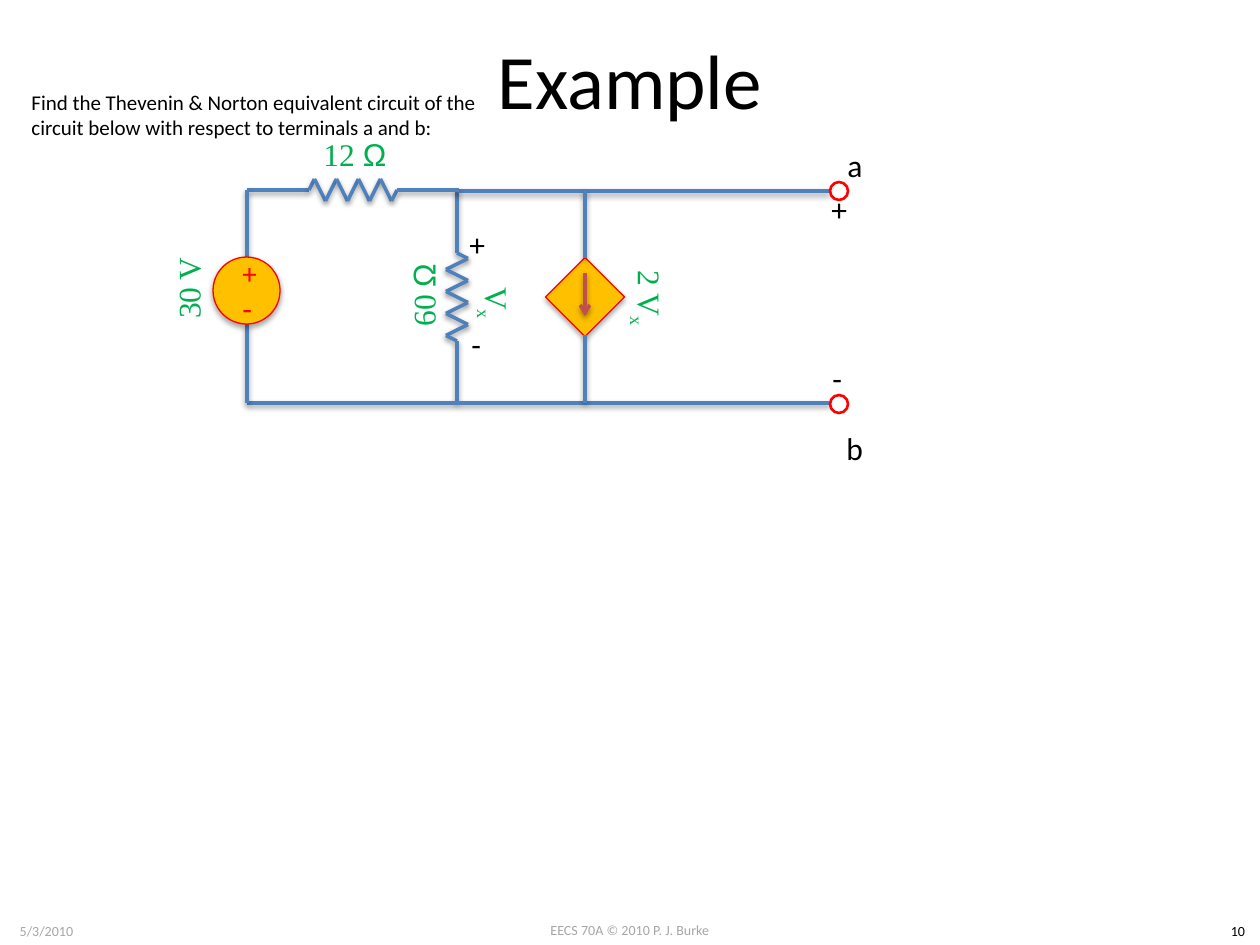
from dataclasses import dataclass
from itertools import pairwise
from pptx import Presentation
from pptx.dml.color import RGBColor
from pptx.enum.shapes import MSO_CONNECTOR as Wire, MSO_SHAPE as Kind
from pptx.enum.text import MSO_ANCHOR as Anchor, MSO_AUTO_SIZE as Auto, PP_ALIGN as Align
from pptx.oxml import parse_xml
from pptx.oxml.ns import nsdecls
from pptx.util import Emu, Pt

SCALE = 914400 / 126


@dataclass(frozen=True)
class Theme:
    ink: str = "000000"
    pale: str = "A6A6A6"
    wire: str = "4F81BD"
    gold: str = "FFC000"
    red: str = "FF0000"
    green: str = "00B050"
    arrow: str = "C0504D"
    body: str = "Calibri"
    serif: str = "Times New Roman"
    sans: str = "Arial"
    title: int = 44
    label: int = 18
    plus: float = 16.6
    task: int = 12
    foot: int = 8


T = Theme()


def px(n):
    return Emu(round(n * SCALE))


def rgb(code):
    return RGBColor.from_string(code)


def text(slide, box, words, size=T.label, font=T.body, color=T.ink, align=Align.LEFT,
         mid=False, wrap=True, turn=0, sub="", ohm=False):
    shape = slide.shapes.add_textbox(*map(px, box))
    shape.rotation = turn
    frame = shape.text_frame
    frame.word_wrap = wrap
    frame.vertical_anchor = Anchor.MIDDLE if mid else Anchor.TOP
    frame.auto_size = Auto.NONE if mid else Auto.SHAPE_TO_FIT_TEXT
    para = frame.paragraphs[0]
    para.alignment = align
    parts = [(words, font)] + [("Ω", T.sans)] * ohm + [(sub, font)] * bool(sub)
    for part, face in parts:
        run = para.add_run()
        run.text = part
        run.font.size, run.font.name = Pt(size), face
        run.font.color.rgb = rgb(color)
    if sub:
        run._r.get_or_add_rPr().set("baseline", "-25000")


def value(slide, x, y, words, **fmt):
    text(slide, (x, y, 150, 92), words, font=T.serif, color=T.green,
         align=Align.CENTER, mid=True, **fmt)


def sign(slide, x, y, words):
    text(slide, (x, y, 42, 50), words, wrap=False)


def shade(shape, dist=20000, alpha=38000):
    shape._element.spPr.append(parse_xml(
        f'<a:effectLst {nsdecls("a")}><a:outerShdw blurRad="40000" dist="{dist}" '
        f'dir="5400000" rotWithShape="0"><a:srgbClr val="000000">'
        f'<a:alpha val="{alpha}"/></a:srgbClr></a:outerShdw></a:effectLst>'))


def wire(slide, start, end, color=T.wire, head=False):
    line = slide.shapes.add_connector(Wire.STRAIGHT, *map(px, (*start, *end)))
    line.line.color.rgb = rgb(color)
    line.line.width = Pt(2)
    if head:
        line.line._get_or_add_ln().append(
            parse_xml(f'<a:tailEnd {nsdecls("a")} type="arrow"/>'))
    shade(line)


def body(slide, kind, box, turn=0):
    shape = slide.shapes.add_shape(kind, *map(px, box))
    shape.rotation = turn
    shape.fill.solid()
    shape.fill.fore_color.rgb = rgb(T.gold)
    shape.line.color.rgb = rgb(T.red)
    shape.line.width = Pt(0.75)
    shade(shape, 23000, 35000)


def resistor(slide, x, y, size, upright=False):
    """Draw lead, eight peaks and lead along the given length."""
    step, swing, lead = 11, 11, 62
    peaks = [(lead + step * (i + 0.5), swing * (-1) ** (i + 1)) for i in range(8)]
    track = [(0, 0), (lead, 0), *peaks, (lead + 8 * step, 0), (size, 0)]
    spots = [(x - b, y + a) if upright else (x + a, y + b) for a, b in track]
    for start, end in pairwise(spots):
        wire(slide, start, end)


def supply(slide, x, y, high):
    """Voltage source on a branch starting at x, y."""
    wire(slide, (x, y), (x, y + 67))
    wire(slide, (x, y + 134), (x, y + high))
    body(slide, Kind.OVAL, (x - 34, y + 67, 67, 67))
    for words, top, size in (("+", 62, T.plus), ("-", 97, T.label)):
        text(slide, (x - 17, y + top, 33, 42), words, size=size, color=T.red,
             align=Align.CENTER, mid=True)
    value(slide, x - 134, y + 52, "30 V", turn=270)


def diamond(slide, x, y, high):
    """Dependent current source on a branch starting at x, y."""
    body(slide, Kind.RECTANGLE, (x - 28, y + 79, 56, 56), turn=225)
    wire(slide, (x, y), (x, y + 68))
    wire(slide, (x, y + 145), (x, y + high))
    wire(slide, (x, y + 83), (x, y + 126), color=T.arrow, head=True)
    value(slide, x - 12, y + 62, "2 V", sub="x", turn=90)


def port(slide, x, y, high):
    """Open terminals a and b, with their signs."""
    for top in (y, y + high):
        ring = slide.shapes.add_shape(Kind.OVAL, *map(px, (x + 1, top - 8, 18, 18)))
        ring.fill.background()
        ring.line.color.rgb = rgb(T.red)
        ring.line.width = Pt(1.5)
        ring.shadow.inherit = False
    for left, top, words in ((6, -50, "a"), (5, 233, "b"), (-10, -6, "+"), (-9, 163, "-")):
        sign(slide, x + left, y + top, words)


def circuit(slide, x, y, wide, high):
    mid, far = x + 210, x + 338
    # Shunt resistor with its voltage
    resistor(slide, mid, y + 1, high - 1, upright=True)
    value(slide, mid - 109, y + 59, "60 ", ohm=True, turn=270)
    value(slide, mid - 37, y + 67, "V", sub="x", turn=90)
    sign(slide, mid, y + 29, "+")
    sign(slide, mid + 2, y + 129, "-")
    # Rails and series resistor
    wire(slide, (x, y + high), (x + wide, y + high))
    wire(slide, (mid, y + 1), (x + wide, y + 1))
    resistor(slide, x, y, 212)
    value(slide, x + 33, y - 82, "12 ", ohm=True)
    # Sources and terminals
    supply(slide, x, y, high)
    diamond(slide, far, y, high)
    port(slide, x + wide, y, high)


def heading(slide, x, y, wide, high):
    text(slide, (x, y, wide, high), "Example", size=T.title,
         align=Align.CENTER, mid=True)
    text(slide, (x - 44, y + 83, 522, 63),
         "Find the Thevenin & Norton equivalent circuit of the circuit below "
         "with respect to terminals a and b:", size=T.task)


def footer(slide, x, y, wide, high):
    for left, top, span, words, color in (
            (483, 0, 294, "EECS 70A © 2010 P. J. Burke", T.pale),
            (0, 1, 93, "5/3/2010", T.pale),
            (wide - 44, 1, 44, "10", T.ink)):
        text(slide, (x + left, y + top, span, high), words, size=T.foot,
             color=color, align=Align.CENTER)


def main():
    deck = Presentation()
    deck.slide_width, deck.slide_height = px(1260), px(945)
    slide = deck.slides.add_slide(deck.slide_layouts[6])
    footer(slide, 0, 915, 1260, 30)
    heading(slide, 63, 0, 1134, 158)
    circuit(slide, 247, 190, 582, 213)
    deck.save("out.pptx")


if __name__ == "__main__":
    main()
